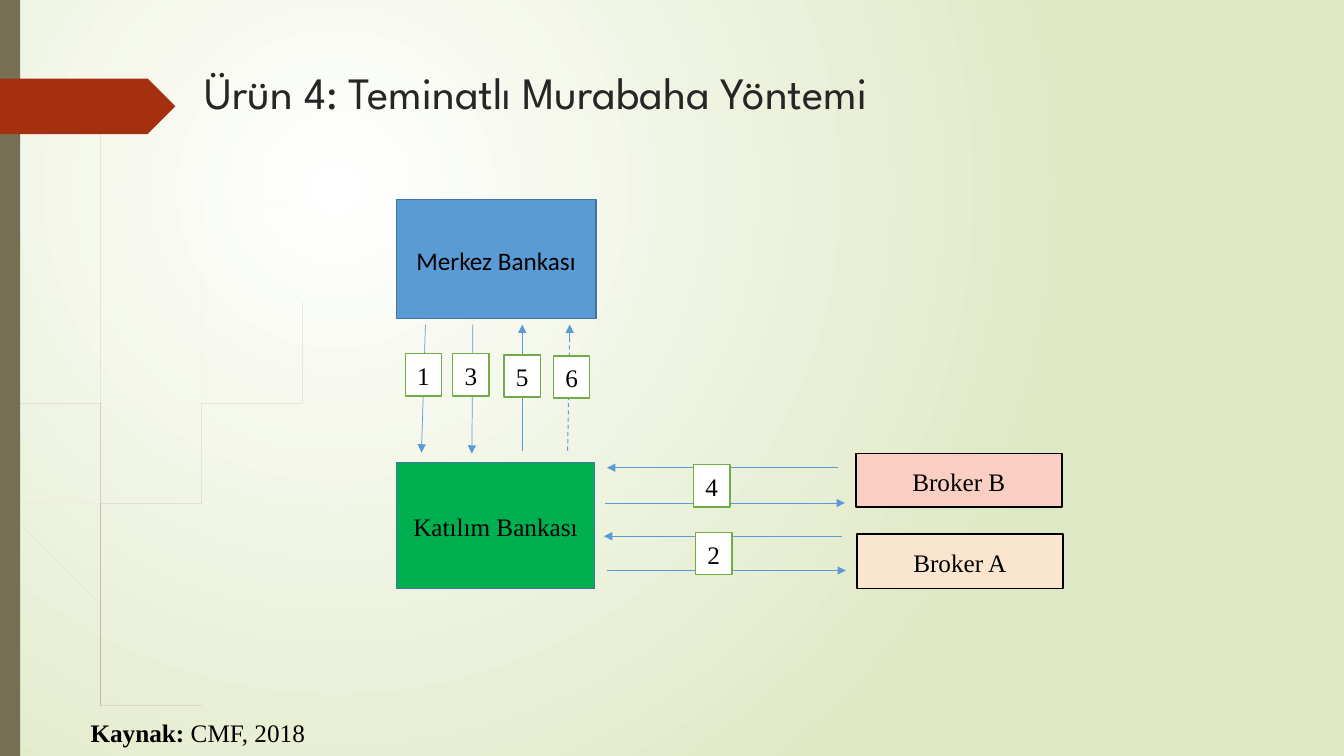
from lxml import etree
from pptx import Presentation
from pptx.dml.color import RGBColor
from pptx.enum.dml import MSO_LINE
from pptx.enum.shapes import MSO_CONNECTOR, MSO_SHAPE
from pptx.enum.text import MSO_ANCHOR, PP_ALIGN
from pptx.oxml import parse_xml
from pptx.oxml.ns import nsdecls, qn
from pptx.util import Inches, Pt

RECTANGLE, TAG = MSO_SHAPE.RECTANGLE, MSO_SHAPE.PENTAGON
STRAIGHT, DASH = MSO_CONNECTOR.STRAIGHT, MSO_LINE.DASH
MIDDLE, TOP = MSO_ANCHOR.MIDDLE, MSO_ANCHOR.TOP
CENTER, LEFT, JUSTIFY = PP_ALIGN.CENTER, PP_ALIGN.LEFT, PP_ALIGN.JUSTIFY
COLUMN = ROW = Inches(1)
COLUMNS, ROWS = 13.33, 7.5
SERIF, SANS, DISPLAY = "Times New Roman", "Calibri", "League Spartan"
OLIVE, RUST, BLUE, GREEN = "766F54", "A53010", "5B9BD5", "70AD47"
BLACK, WHITE = "000000", "FFFFFF"
STEP_SIZE = (0.36, 0.42)

PALE_STEMS = [
    ([(0, 2.99), (0.1, 3.44), (0.28, 4.7), (0.65, 6.21), (1.01, 7.14), (1.14, 7.5)],
     [(0, 2.82), (0.09, 3.22), (0.17, 3.76), (0.31, 4.69), (0.7, 6.19), (1.05, 7.11),
      (1.24, 7.5)]),
    ([(0.14, 3.45), (0.62, 5.2), (0.85, 5.86), (1.27, 6.92), (1.55, 7.5)],
     [(0.14, 3.45), (0.17, 3.76), (0.58, 5.22), (0.84, 5.99), (1.23, 6.94), (1.5, 7.5)]),
    ([(3.12, 1.53), (2.68, 1.97), (2.28, 2.44), (1.58, 3.48), (1.07, 4.61), (0.85, 5.84),
      (0.84, 5.99), (0.87, 6.46), (0.93, 6.83), (1.05, 7.11)],
     [(3.12, 1.53), (2.68, 1.98), (2.29, 2.45), (1.6, 3.49), (1.1, 4.62), (0.88, 5.84),
      (0.88, 6.1), (0.91, 6.46), (1.03, 7.06), (1.05, 7.11)]),
]
DARK_STEMS = [
    ([(0.03, 0), (0.07, 1.1), (0.17, 2.33), (0.33, 3.55), (0.57, 4.77), (0.68, 5.57),
      (0.93, 6.59), (1.17, 7.22), (1.27, 7.5)],
     [(0.04, 0), (0.08, 1.09), (0.19, 2.32), (0.36, 3.55), (0.55, 4.53), (0.72, 5.56),
      (0.98, 6.57), (1.22, 7.19), (1.36, 7.5)]),
    ([(0.7, 1.41), (0.62, 1.93), (0.56, 2.45), (0.52, 3.49), (0.55, 4.49), (0.64, 5.05),
      (0.88, 5.92), (1.06, 6.45), (1.32, 7.08), (1.52, 7.49)],
     [(0.7, 1.41), (0.63, 1.93), (0.58, 2.45), (0.54, 3.49), (0.6, 4.72), (0.93, 5.9),
      (1.1, 6.41), (1.36, 7.06), (1.57, 7.49)]),
    ([(2.6, 3.44), (2.31, 3.73), (2.04, 4.05), (1.56, 4.74), (1.22, 5.51), (1.06, 6.31),
      (1.06, 6.45), (1.1, 6.91), (1.22, 7.19)],
     [(2.6, 3.44), (2.31, 3.74), (2.05, 4.06), (1.58, 4.76), (1.25, 5.52), (1.11, 6.33),
      (1.11, 6.56), (1.22, 7.19)]),
]
PARTIES = [
    ("Merkez Bankası", (3.93, 1.98, 1.98, 1.18), BLUE, "43739E", 1, SANS),
    ("Katılım Bankası", (3.93, 4.59, 1.97, 1.25), "00B050", "43739E", 1, SERIF),
    ("Broker B", (8.49, 4.5, 2.04, 0.53), "F9CFC3", BLACK, 1.25, SERIF),
    ("Broker A", (8.5, 5.3, 2.04, 0.54), "FAE5CF", BLACK, 1.25, SERIF),
]
FLOWS = [
    ((4.22, 3.22), (4.18, 4.49)),
    ((4.69, 3.22), (4.68, 4.5)),
    ((5.18, 4.47), (5.18, 3.22)),
    ((5.65, 3.35), (5.65, 3.22)),
    ((8.31, 4.64), (6.02, 4.64)),
    ((6, 4.99), (8.38, 4.99)),
    ((8.35, 5.32), (5.99, 5.32)),
    ((6.02, 5.66), (8.39, 5.66)),
]
STEPS = [("1", 4.02, 3.51), ("3", 4.49, 3.51), ("5", 5, 3.52), ("6", 5.49, 3.53),
         ("4", 6.88, 4.61), ("2", 6.9, 5.28)]


def paint(color_format, value):
    color_format.rgb = RGBColor.from_string(value)


def fill_solid(shape, value):
    shape.fill.solid()
    paint(shape.fill.fore_color, value)
    shape.shadow.inherit = False


def grid(*lengths):
    return [int(length * unit) for length, unit in zip(lengths, (COLUMN, ROW) * 2)]


def style_text(box, font, size, color, align, anchor):
    box.text_frame.vertical_anchor = anchor
    para = box.text_frame.paragraphs[0]
    para.alignment = align
    for span in para.runs:
        span.font.name = font
        span.font.size = Pt(size)
        paint(span.font.color, color)
    return para


def space_label(para):
    para.line_spacing = 1.06
    para.space_after = Pt(8)


def add_background(slide):
    slide.background.fill.gradient()
    gradient = next(slide.element.iter(qn("a:gradFill")))
    gradient.getparent().replace(gradient, parse_xml(
        f'<a:gradFill {nsdecls("a")} rotWithShape="1"><a:gsLst>'
        '<a:gs pos="0"><a:srgbClr val="FFFFFF"/></a:gs>'
        '<a:gs pos="100000"><a:srgbClr val="DFE8C4"/></a:gs></a:gsLst>'
        '<a:path path="circle"><a:fillToRect l="50000" t="50000" r="100000" b="100000"/>'
        '</a:path></a:gradFill>'))


def smooth_edge(knots, pieces=8):
    padded = [knots[0], *knots, knots[-1]]
    points = [knots[0]]
    for a, b, c, d in zip(padded, padded[1:], padded[2:], padded[3:]):
        for piece in range(1, pieces + 1):
            t = piece / pieces
            points.append(tuple(
                q + t * (r - p) / 2 + t ** 2 * (2 * p - 5 * q + 4 * r - s) / 2
                + t ** 3 * (3 * q - p - 3 * r + s) / 2
                for p, q, r, s in zip(a, b, c, d)))
    return points


def add_stem(slide, edges, opacity):
    near, far = map(smooth_edge, edges)
    outline = near + far[::-1]
    builder = slide.shapes.build_freeform(*outline[0], scale=COLUMN)
    builder.add_line_segments(outline[1:], close=True)
    stem = builder.convert_to_shape()
    fill_solid(stem, OLIVE)
    stem.line.fill.background()
    color = next(stem.element.spPr.iter(qn("a:srgbClr")))
    etree.SubElement(color, qn("a:alpha"), val=str(opacity * 1000))


def add_block(slide, preset, place, color):
    block = slide.shapes.add_shape(preset, *grid(*place))
    fill_solid(block, color)
    block.line.fill.background()
    return block


def add_label(slide, text, place, color, border, weight, font):
    box = add_block(slide, RECTANGLE, place, color)
    paint(box.line.color, border)
    box.line.width = Pt(weight)
    box.text_frame.text = text
    box.text_frame.word_wrap = True
    space_label(style_text(box, font, 18, BLACK, CENTER, MIDDLE))


def add_flow(slide, start, end, weight=0.5):
    flow = slide.shapes.add_connector(STRAIGHT, *grid(*start, *end))
    paint(flow.line.color, BLUE)
    flow.line.width = Pt(weight)
    etree.SubElement(flow.element.spPr, qn("a:effectLst"))
    return flow


def add_arrowhead(flow):
    line = flow.element.spPr.find(qn("a:ln"))
    etree.SubElement(line, qn("a:tailEnd"), type="triangle")


def add_title(slide, text):
    title = slide.shapes.title
    title.left, title.top, title.width, title.height = grid(0.94, 0.03, 11.33, 1.75)
    title.text_frame.text = text
    title.text_frame.margin_left = Inches(1.09)
    style_text(title, DISPLAY, 32, "262626", LEFT, MIDDLE)


def add_source(slide, heading, citation):
    box = slide.shapes.add_textbox(*grid(0.8, 7.05, 2.41, 0.43))
    box.text_frame.word_wrap = False
    para = box.text_frame.paragraphs[0]
    for text in (heading, citation):
        para.add_run().text = text
    space_label(style_text(box, SERIF, 18, BLACK, JUSTIFY, TOP))
    para.runs[0].font.bold = True


def main():
    deck = Presentation()
    deck.slide_width, deck.slide_height = grid(COLUMNS, ROWS)
    slide = deck.slides.add_slide(deck.slide_layouts.get_by_name("Title Only"))
    add_background(slide)
    for stems, opacity in ((PALE_STEMS, 20), (DARK_STEMS, 100)):
        for edges in stems:
            add_stem(slide, edges, opacity)
    add_block(slide, RECTANGLE, (0, 0, 0.2, ROWS), OLIVE)
    add_block(slide, TAG, (0, 0.78, 1.74, 0.55), RUST)
    add_title(slide, "Ürün 4: Teminatlı Murabaha Yöntemi")
    for party in PARTIES:
        add_label(slide, *party)
    for start, end in FLOWS:
        add_arrowhead(add_flow(slide, start, end))
    add_flow(slide, (5.63, 4.47), (5.65, 3.31), 0.75).line.dash_style = DASH
    for number, left, top in STEPS:
        add_label(slide, number, (left, top, *STEP_SIZE), WHITE, GREEN, 1, SERIF)
    add_source(slide, "Kaynak:", " CMF, 2018")
    deck.save("out.pptx")


if __name__ == "__main__":
    main()
